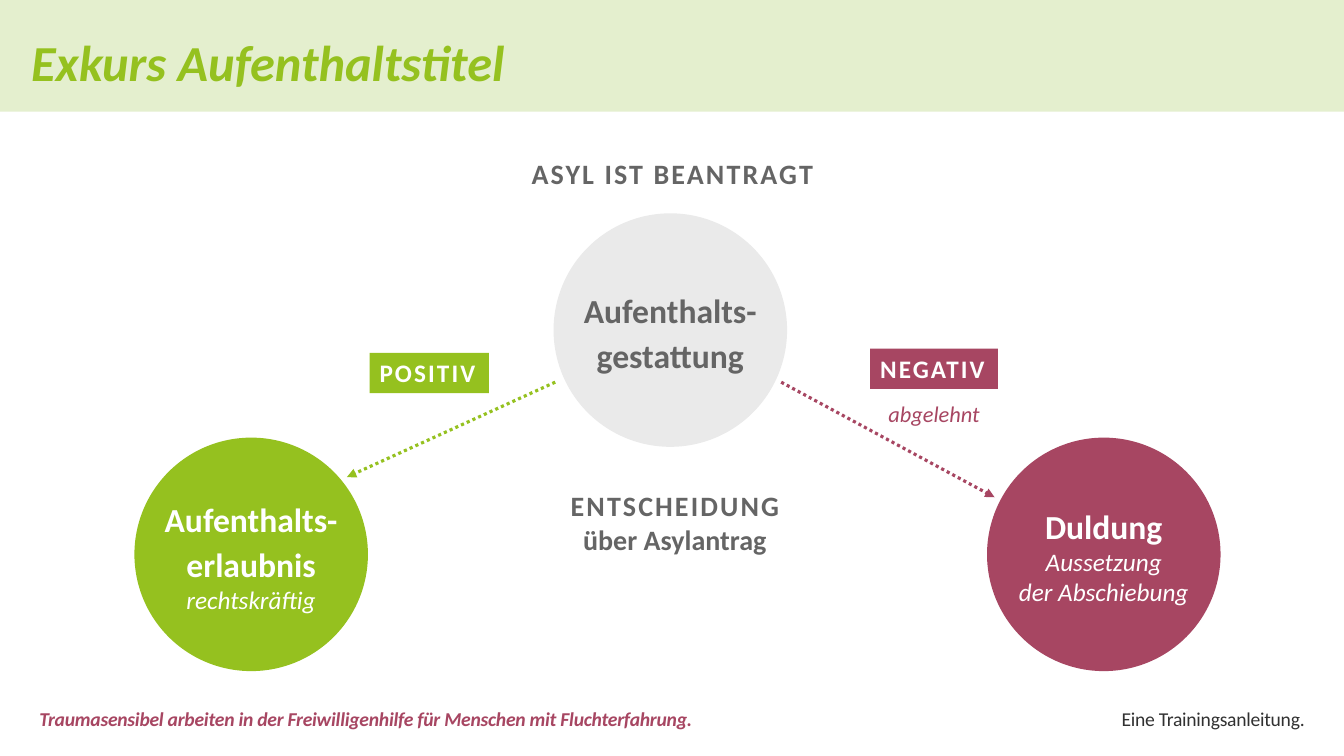
"""Builds the slide on residence titles: one application, two possible outcomes."""
from pptx import Presentation
from pptx.dml.color import RGBColor
from pptx.enum.dml import MSO_LINE
from pptx.enum.shapes import MSO_CONNECTOR, MSO_SHAPE
from pptx.enum.text import MSO_ANCHOR, MSO_AUTO_SIZE, PP_ALIGN
from pptx.oxml.ns import qn
from pptx.util import Inches, Pt
from lxml import etree

LEFT, CENTER, RIGHT = PP_ALIGN.LEFT, PP_ALIGN.CENTER, PP_ALIGN.RIGHT
TOP, MIDDLE = MSO_ANCHOR.TOP, MSO_ANCHOR.MIDDLE
OVAL, RECTANGLE = MSO_SHAPE.OVAL, MSO_SHAPE.RECTANGLE
STRAIGHT, DOTTED = MSO_CONNECTOR.STRAIGHT, MSO_LINE.ROUND_DOT
FIXED = MSO_AUTO_SIZE.NONE

WIDTH, HEIGHT = Inches(13.33), Inches(7.5)
COLUMNS, ROWS = 16, 9
DIAMETER = 2.78


class SlideBuilder:
    """Holds the style and the current slide, placed on a 16 by 9 grid."""

    FONT = "Calibri"
    COLORS = {
        "green": "95C11F", "mint": "E4EFCE", "berry": "A74662", "silver": "EAEAEA",
        "gray": "656565", "ink": "313131", "white": "FFFFFF",
    }
    STYLES = {
        "heading": {"size": 36, "bold": True, "italic": True, "leading": 32},
        "status": {"size": 24, "bold": True, "leading": 32},
        "detail": {"size": 18, "italic": True},
        "stage": {"size": 20, "bold": True, "tracking": 150},
        "stage_detail": {"size": 20, "bold": True},
        "label": {"size": 18, "bold": True, "tracking": 150},
        "remark": {"size": 16, "italic": True, "leading": 26},
        "motto": {"size": 14, "bold": True, "italic": True, "tracking": -20},
        "footer": {"size": 14, "tracking": -20},
    }

    def __init__(self, page):
        self.page = page

    def color(self, name):
        return RGBColor.from_string(self.COLORS[name])

    def place(self, column, row, columns, rows):
        return (round(column * WIDTH / COLUMNS), round(row * HEIGHT / ROWS),
                round(columns * WIDTH / COLUMNS), round(rows * HEIGHT / ROWS))

    def set_lines(self, box, lines, color, align=CENTER, anchor=MIDDLE, wrap=False):
        frame = box.text_frame
        frame.text = "\n".join(text for text, _ in lines)
        frame.word_wrap, frame.auto_size = wrap, FIXED
        frame.vertical_anchor = anchor
        for para, (_, style_name) in zip(frame.paragraphs, lines):
            style = self.STYLES[style_name]
            para.alignment = align
            if "leading" in style:
                para.line_spacing = Pt(style["leading"])
            for span in para.runs:
                span.font.name, span.font.size = self.FONT, Pt(style["size"])
                span.font.bold = style.get("bold", False)
                span.font.italic = style.get("italic", False)
                span.font.color.rgb = self.color(color)
                if "tracking" in style:
                    span.font._element.set("spc", str(style["tracking"]))

    def shape(self, kind, area, fill):
        box = self.page.shapes.add_shape(kind, *self.place(*area))
        box.shadow.inherit = False
        box.fill.solid()
        box.fill.fore_color.rgb = self.color(fill)
        box.line.fill.background()
        return box

    def heading(self, text, area, color):
        title = self.page.shapes.title
        title.left, title.top, title.width, title.height = self.place(*area)
        self.set_lines(title, [(text, "heading")], color, LEFT, wrap=True)
        return title

    def text(self, lines, area, color, align=CENTER, anchor=TOP):
        box = self.page.shapes.add_textbox(*self.place(*area))
        self.set_lines(box, lines, color, align, anchor)

    def circle(self, lines, column, row, fill, color):
        box = self.shape(OVAL, (column, row, DIAMETER, DIAMETER), fill)
        self.set_lines(box, lines, color)

    def label(self, text, area, fill):
        box = self.shape(RECTANGLE, area, fill)
        self.set_lines(box, [(text, "label")], "white", LEFT, TOP)

    def arrow(self, start, end, color):
        connector = self.page.shapes.add_connector(
            STRAIGHT, *self.place(*start, *end))
        connector.line.color.rgb = self.color(color)
        connector.line.width = Pt(2.25)
        connector.line.dash_style = DOTTED
        properties = connector._element.spPr
        etree.SubElement(properties.find(qn("a:ln")), qn("a:tailEnd"), type="triangle")
        etree.SubElement(properties, qn("a:effectLst"))


def main():
    deck = Presentation()
    deck.slide_width, deck.slide_height = WIDTH, HEIGHT
    slide = SlideBuilder(deck.slides.add_slide(deck.slide_layouts[5]))

    slide.text([("Traumasensibel arbeiten in der Freiwilligenhilfe für Menschen mit Fluchterfahrung.",
                 "motto")], (0.35, 8.36, 8, 0.41), "berry", LEFT)
    slide.text([("Eine Trainingsanleitung.", "footer")],
               (13.19, 8.36, 2.46, 0.41), "ink", RIGHT)

    band = slide.shape(RECTANGLE, (0, 0, COLUMNS, 1.33), "mint")
    title = slide.heading("Exkurs Aufenthaltstitel", (0.25, 0.29, 15.37, 1.07), "green")
    band._element.addnext(title._element)

    slide.text([("ASYL IST BEANTRAGT", "stage")], (6.18, 1.81, 3.65, 0.53), "gray")
    slide.text([("ENTSCHEIDUNG", "stage"), ("über Asylantrag", "stage_detail")],
               (6.65, 5.76, 2.77, 1.33), "gray")

    slide.circle([("Aufenthalts-\vgestattung", "status")], 6.59, 2.54, "silver", "gray")
    slide.circle([("Aufenthalts-\verlaubnis", "status"), ("rechtskräftig", "detail")],
                 1.6, 5.21, "green", "white")
    slide.circle([("Duldung", "status"), ("Aussetzung\vder Abschiebung", "detail")],
                 11.75, 5.21, "berry", "white")

    slide.label("POSITIV", (4.4, 4.2, 1.42, 0.48), "green")
    slide.text([("abgelehnt", "remark")], (10.36, 4.58, 1.52, 0.58), "berry", anchor=MIDDLE)
    slide.label("NEGATIV", (10.36, 4.15, 1.52, 0.48), "berry")

    slide.arrow((6.61, 4.55), (4.13, 5.68), "green")
    slide.arrow((9.3, 4.55), (11.84, 5.92), "berry")
    deck.save("out.pptx")


if __name__ == "__main__":
    main()
